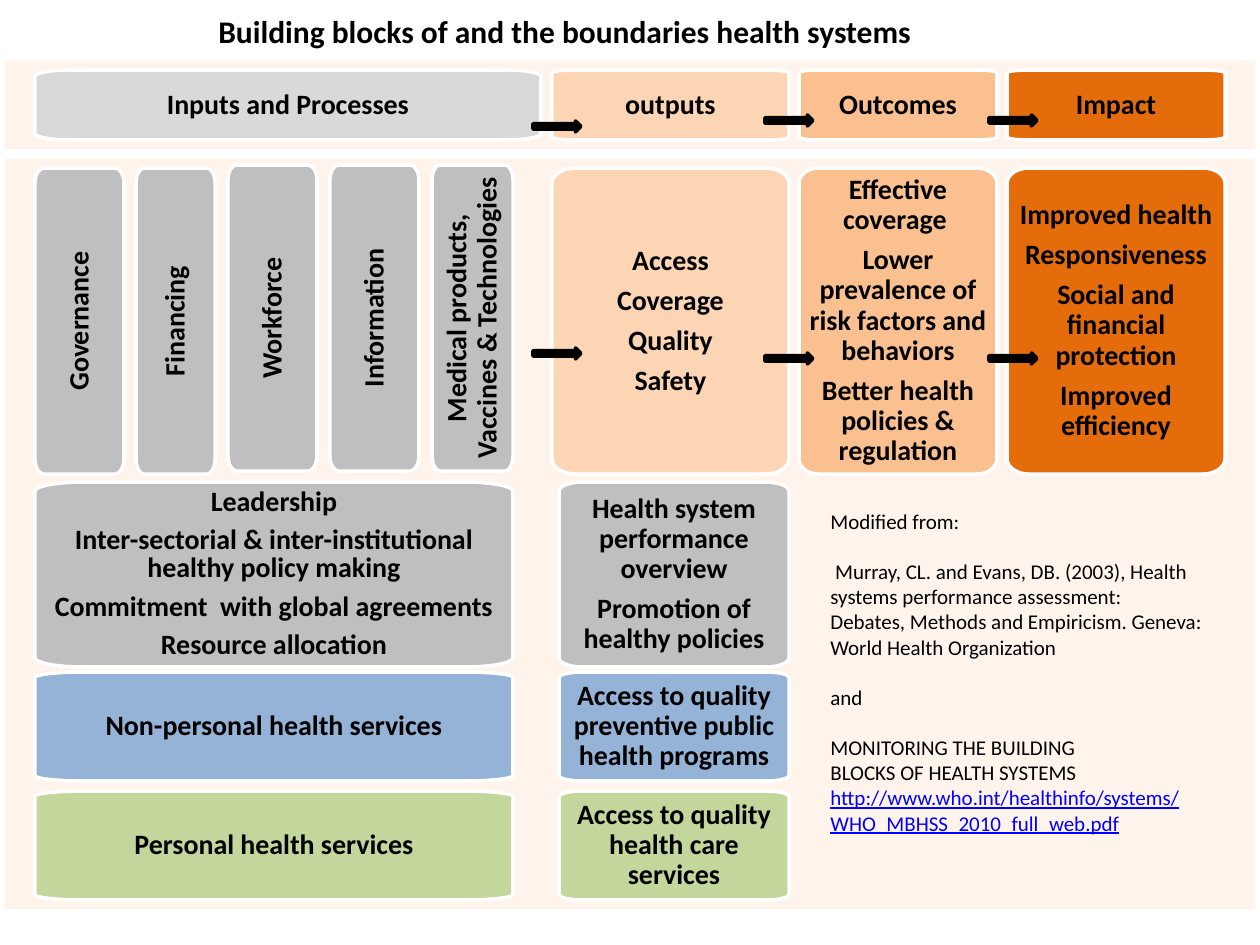
from dataclasses import dataclass
from typing import Any

from lxml.etree import SubElement
from pptx import Presentation
from pptx.dml.color import RGBColor
from pptx.enum.shapes import MSO_SHAPE as Preset
from pptx.enum.text import MSO_ANCHOR as Anchor, PP_ALIGN as Align
from pptx.oxml.ns import qn
from pptx.util import Inches, Pt

SCALE = Inches(1) / 126  # EMU in one px
BEND = 0.55  # pull of a quarter ellipse towards its corner

BLACK = RGBColor(0x00, 0x00, 0x00)
WHITE = RGBColor(0xFF, 0xFF, 0xFF)
BLUE = RGBColor(0x00, 0x00, 0xFF)
CREAM = RGBColor(0xFE, 0xF4, 0xEC)
SILVER = RGBColor(0xD9, 0xD9, 0xD9)
GRAY = RGBColor(0xBF, 0xBF, 0xBF)
PEACH = RGBColor(0xFC, 0xD5, 0xB5)
APRICOT = RGBColor(0xFA, 0xC0, 0x90)
ORANGE = RGBColor(0xE4, 0x6C, 0x0A)
SKY = RGBColor(0x95, 0xB3, 0xD7)
GREEN = RGBColor(0xC3, 0xD6, 0x9B)

BOLD = {"name": "Calibri", "size": Pt(16), "bold": True}
TITLE = BOLD | {"size": Pt(18)}
NOTE = {"name": "Calibri", "size": Pt(12)}
LOOSE = {"alignment": Align.CENTER, "line_spacing": 0.9, "space_after": Pt(5.6)}
TIGHT = LOOSE | {"line_spacing": Pt(16), "space_after": Pt(6)}
BREAK = {"space_before": Pt(14.3)}


@dataclass
class Box:
    x: int
    y: int
    w: int
    h: int
    fill: RGBColor
    lines: tuple[str, ...]
    inset: int = 9
    curve: tuple[float, float] = (0.1, 0.05)  # corner radii as shares of w and h
    para: dict[str, Any] | None = None
    turned: bool = False


@dataclass
class Column:
    x: int
    w: int
    fill: RGBColor
    head: str
    lines: tuple[str, ...]


@dataclass
class Row:
    y: int
    h: int
    fill: RGBColor
    left: tuple[str, ...]
    right: tuple[str, ...]
    para: dict[str, Any]


COLUMNS = (
    Column(552, 237, PEACH, "outputs", ("Access", "Coverage", "Quality", "Safety")),
    Column(799, 198, APRICOT, "Outcomes", (
        "Effective coverage ", "Lower prevalence of risk factors and behaviors",
        "Better health policies & regulation")),
    Column(1007, 218, ORANGE, "Impact", (
        "Improved health", "Responsiveness", "Social and financial protection",
        "Improved efficiency")),
)
PILLARS = (
    (35, 168, 89, "Governance"),
    (136, 168, 79, "Financing"),
    (228, 165, 89, "Workforce"),
    (330, 165, 89, "Information"),
    (432, 165, 81, "Medical products, Vaccines & Technologies"),
)
ROWS = (
    Row(482, 185, GRAY, (
        "Leadership", "Inter-sectorial & inter-institutional healthy policy making",
        "Commitment  with global agreements", "Resource allocation"),
        ("Health system performance overview", "Promotion of healthy policies"), TIGHT),
    Row(672, 109, SKY, ("Non-personal health services",),
        ("Access to quality preventive public health programs",), LOOSE),
    Row(791, 109, GREEN, ("Personal health services",),
        ("Access to quality health care services",), LOOSE),
)
ARROWS = ((533, 121, 348), (765, 115, 353), (989, 115, 353))
SOURCES = (
    ("Modified from:", {}),
    (" Murray, CL. and Evans, DB. (2003), Health systems performance assessment:", BREAK),
    ("Debates, Methods and Empiricism. Geneva: World Health Organization", {}),
    ("and", BREAK),
    ("MONITORING THE BUILDING", BREAK),
    ("BLOCKS OF HEALTH SYSTEMS", {}),
    ("http://www.who.int/healthinfo/systems/WHO_MBHSS_2010_full_web.pdf", {}),
)


def emu(px: float) -> int:
    return round(px * SCALE)


def apply(target: Any, values: dict[str, Any]) -> None:
    for name, value in values.items():
        setattr(target, name, value)


def paint(shape: Any, fill: RGBColor, line: RGBColor | None) -> None:
    shape.shadow.inherit = False
    shape.fill.solid()
    shape.fill.fore_color.rgb = fill
    if line is None:
        shape.line.fill.background()
    else:
        shape.line.color.rgb = line
        shape.line.width = Pt(2)


def write(frame: Any, lines: list[tuple[str, dict[str, Any]]], font: dict[str, Any]) -> None:
    """Fill a text frame with one paragraph for each text and its format."""
    for i, (text, para) in enumerate(lines):
        item = frame.paragraphs[0] if i == 0 else frame.add_paragraph()
        apply(item, para)
        run = item.add_run()
        run.text = text
        apply(run.font, font)
        run.font.color.rgb = BLACK


def outline(box: Box) -> list[tuple[int, int]]:
    """Ends of the four corners, clockwise from the left and back to the start."""
    rx, ry = box.curve[0] * box.w, box.curve[1] * box.h
    left, top, right, base = box.x, box.y, box.x + box.w, box.y + box.h
    ends = ((left, top + ry), (left + rx, top), (right - rx, top), (right, top + ry),
            (right, base - ry), (right - rx, base), (left + rx, base), (left, base - ry),
            (left, top + ry))
    return [(emu(x), emu(y)) for x, y in ends]


def bend(shape: Any) -> None:
    """Turn every second side of a freeform into a quarter ellipse."""
    ends = [(int(pt.get("x")), int(pt.get("y"))) for pt in shape._element.iter(qn("a:pt"))]
    sides = list(shape._element.iter(qn("a:lnTo")))
    for i in range(0, len(sides), 2):
        start, end = ends[i], ends[i + 1]
        peak = (start[0], end[1]) if i % 4 == 0 else (end[0], start[1])
        sides[i].tag = qn("a:cubicBezTo")
        sides[i].clear()
        pulls = [tuple(round(a + BEND * (b - a)) for a, b in zip(spot, peak))
                 for spot in (start, end)]
        for x, y in (*pulls, end):
            SubElement(sides[i], qn("a:pt"), x=str(x), y=str(y))


def draw_box(shapes: Any, box: Box) -> None:
    first, *rest = outline(box)
    pen = shapes.build_freeform(*first, scale=1.0)
    pen.add_line_segments(rest, close=True)
    shape = pen.convert_to_shape()
    bend(shape)
    paint(shape, box.fill, WHITE)
    frame = shape.text_frame
    sides = ("left", "top", "right", "bottom")
    apply(frame, {f"margin_{side}": emu(box.inset) for side in sides})
    apply(frame, {"word_wrap": True, "vertical_anchor": Anchor.MIDDLE})
    if box.turned:
        frame._txBody.bodyPr.set("vert", "vert270")
    write(frame, [(text, box.para or LOOSE) for text in box.lines], BOLD)


def draw_preset(shapes: Any, kind: Any, area: tuple[int, ...],
                fill: RGBColor, line: RGBColor | None) -> None:
    paint(shapes.add_shape(kind, *map(emu, area)), fill, line)


def add_text(shapes: Any, area: tuple[int, ...], wrap: bool,
             lines: list[tuple[str, dict[str, Any]]], font: dict[str, Any]) -> Any:
    frame = shapes.add_textbox(*map(emu, area)).text_frame
    frame.word_wrap = wrap
    write(frame, lines, font)
    return frame


def boxes() -> list[Box]:
    found = [Box(35, 70, 506, 70, SILVER, ("Inputs and Processes",), 15, (0.07, 0.09))]
    for x, y, w, name in PILLARS:
        found.append(Box(x, y, w, 306, GRAY, (name,), turned=True))
    for col in COLUMNS:
        found.append(Box(col.x, 70, col.w, 70, col.fill, (col.head,), 11, (0.1, 0.04)))
        found.append(Box(col.x, 168, col.w, 306, col.fill, col.lines))
    for row in ROWS:
        found.append(Box(35, row.y, 478, row.h, row.fill, row.left, para=row.para))
        found.append(Box(559, row.y, 230, row.h, row.fill, row.right))
    return found


def main() -> None:
    deck = Presentation()
    apply(deck, {"slide_width": Inches(10), "slide_height": Inches(7.5)})
    shapes = deck.slides.add_slide(deck.slide_layouts[6]).shapes
    for y, h in ((159, 750), (61, 88)):
        draw_preset(shapes, Preset.RECTANGLE, (5, y, 1250, h), CREAM, None)
    for box in boxes():
        draw_box(shapes, box)
    for x, *tops in ARROWS:
        for y in tops:
            draw_preset(shapes, Preset.RIGHT_ARROW, (x, y, 48, 11), BLACK, BLACK)
    add_text(shapes, (206, 6, 755, 50), False,
             [("Building blocks of and the boundaries health systems", {})], TITLE)
    notes = add_text(shapes, (818, 502, 407, 369), True, list(SOURCES), NOTE)
    link = notes.paragraphs[-1].runs[0].font
    link.underline = True
    link.color.rgb = BLUE
    deck.save("out.pptx")


if __name__ == "__main__":
    main()
